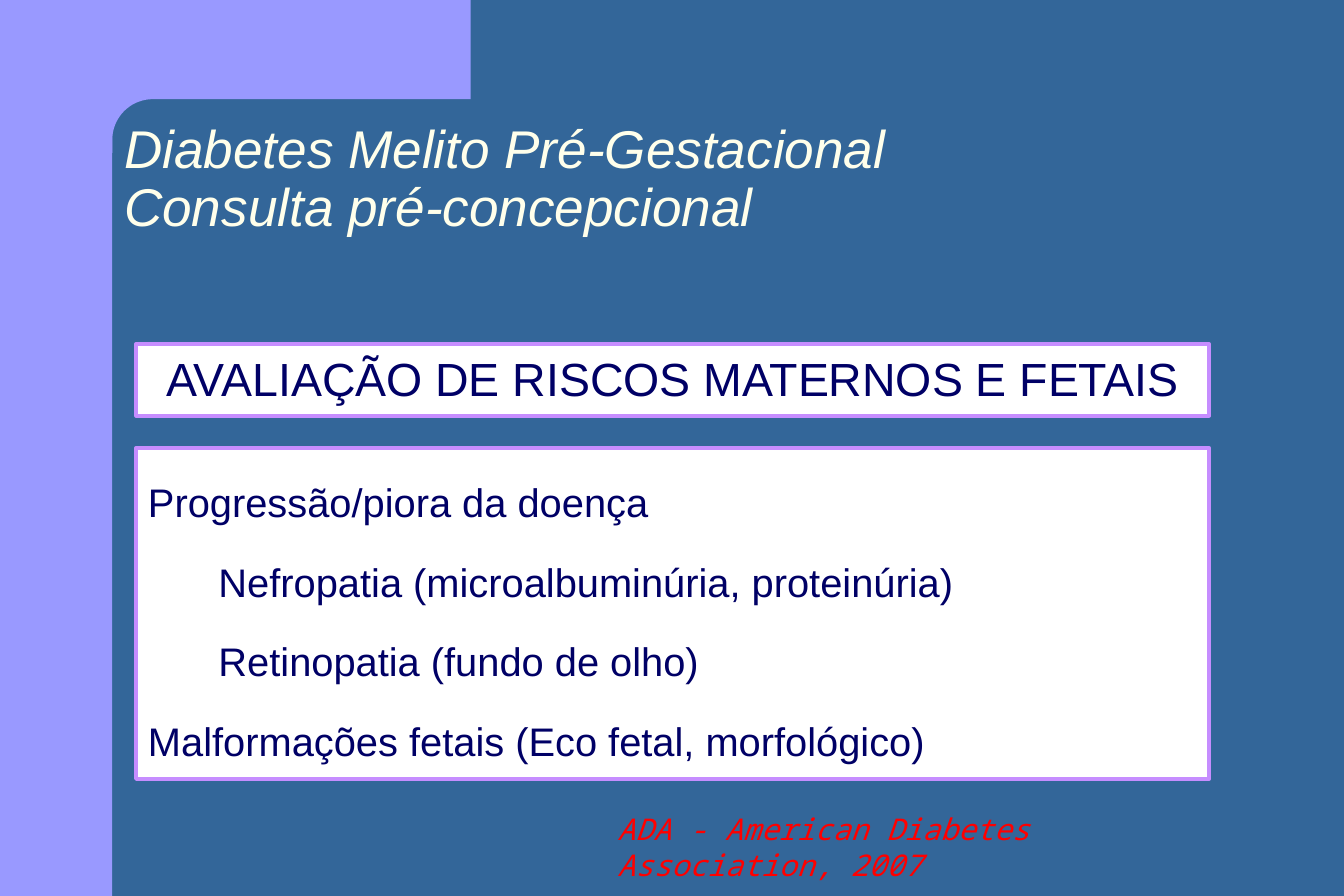
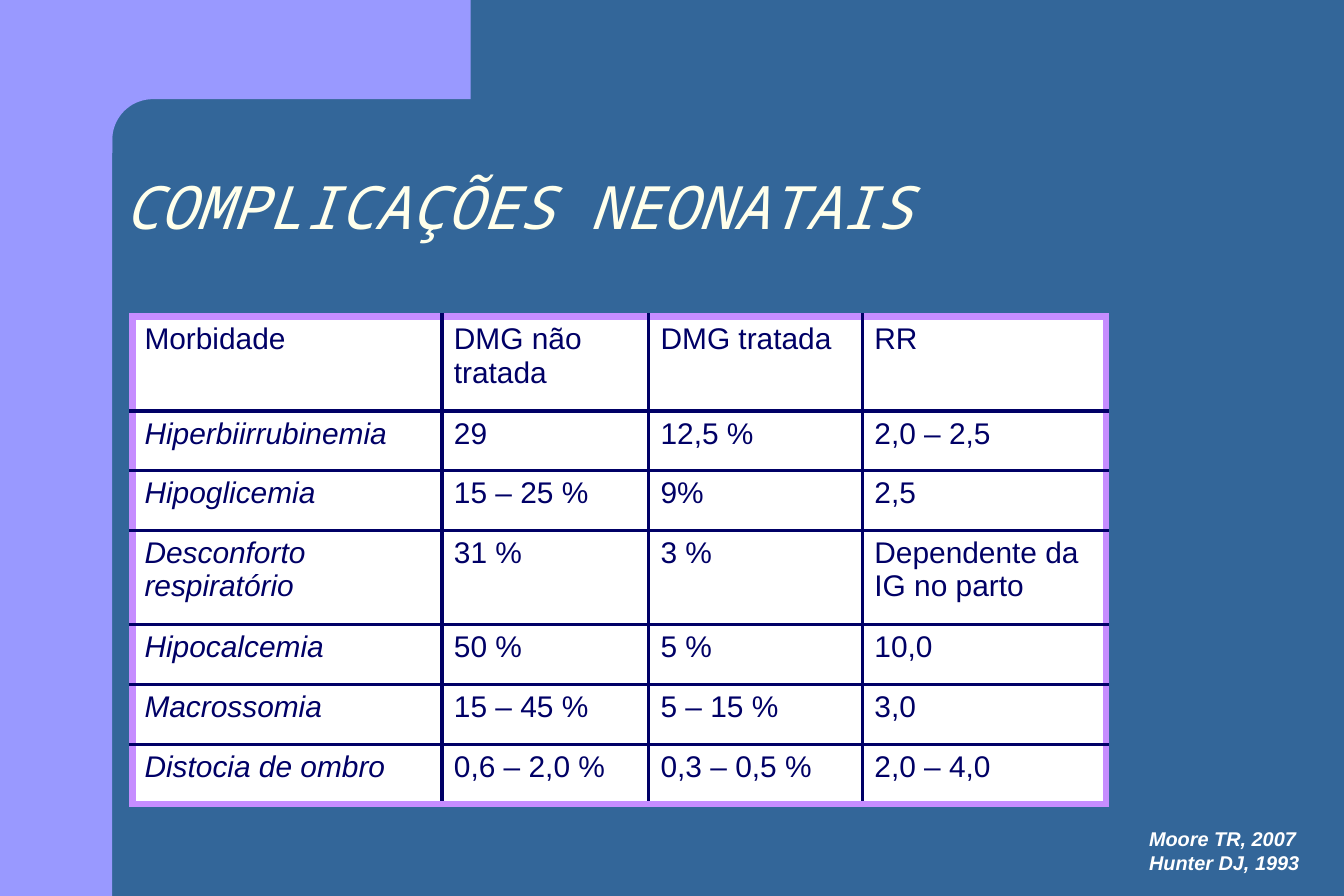
import math

from lxml import etree
from pptx import Presentation
from pptx.dml.color import RGBColor
from pptx.enum import shapes, text
from pptx.oxml.ns import qn
from pptx.util import Pt

EMU_PER_PX = 9144  # 100 px to the inch
SLIDE_W, SLIDE_H = 1125, 750

TEAL, LILAC, VIOLET = "336699", "9999FF", "C68DFF"
CREAM, NAVY, WHITE, RED = "FFFFEB", "000066", "FFFFFF", "FF0000"
SANS, MONO = "Arial", "Noto Sans Mono"

TITLE_FORMAT = {"italic": True, "color": CREAM}
PANEL_FORMAT = {"name": SANS, "color": NAVY}


def px(length):
    return round(length * EMU_PER_PX)


def rgb(hex_color):
    return RGBColor.from_string(hex_color)


def set_font(font, formats):
    for attribute, value in formats.items():
        if attribute == "color":
            font.color.rgb = rgb(value)
        else:
            setattr(font, attribute, value)


def paint(shape, fill, line=None, line_width=2.5):
    shape.shadow.inherit = False
    shape.fill.solid()
    shape.fill.fore_color.rgb = rgb(fill)
    if line:
        shape.line.color.rgb = rgb(line)
        shape.line.width = Pt(line_width)
    else:
        shape.line.fill.background()


def write(frame, lines, formats, anchor=text.MSO_ANCHOR.TOP, **paragraph_formats):
    """Fill a text frame with one paragraph per line and return the paragraphs."""
    frame.word_wrap = True
    frame.vertical_anchor = anchor
    for index, line in enumerate(lines):
        paragraph = frame.paragraphs[0] if index == 0 else frame.add_paragraph()
        run = paragraph.add_run()
        run.text = line
        set_font(run.font, formats)
        for attribute, value in paragraph_formats.items():
            setattr(paragraph, attribute, value)
    return frame.paragraphs


# Shared parts
def add_band(slide):
    """Left band and top tab, joined by a rounded inner corner."""
    band_w, tab_left, tab_right, tab_h, radius = 94, 56, 394, 83, 34
    band = slide.shapes.add_shape(
        shapes.MSO_SHAPE.RECTANGLE, 0, 0, px(band_w), px(SLIDE_H))
    paint(band, LILAC)

    center_x, center_y = band_w + radius, tab_h + radius
    corner = [(center_x - radius * math.cos(math.radians(angle)),
               center_y - radius * math.sin(math.radians(angle)))
              for angle in range(90, -1, -5)]
    outline = [(tab_right, 0), (tab_right, tab_h), *corner,
               (band_w, 128), (tab_left, 128), (tab_left, 0)]
    points = [(px(x), px(y)) for x, y in outline]
    builder = slide.shapes.build_freeform(*points[0], scale=1.0)
    builder.add_line_segments(points[1:], close=True)
    paint(builder.convert_to_shape(), LILAC)


def add_text(slide, box, lines, formats, **paragraph_formats):
    area = slide.shapes.add_textbox(*map(px, box))
    return write(area.text_frame, lines, formats, **paragraph_formats)


def add_title(slide, top, title, font_name, size):
    paragraphs = add_text(slide, (94, top, 975, 125), [""], {},
                          anchor=text.MSO_ANCHOR.BOTTOM, line_spacing=0.9)
    paragraphs[0].text = title
    for run in paragraphs[0].runs:
        set_font(run.font, {**TITLE_FORMAT, "name": font_name, "size": Pt(size)})


def add_panel(slide, box, lines, size, **paragraph_formats):
    panel = slide.shapes.add_shape(shapes.MSO_SHAPE.RECTANGLE, *map(px, box))
    paint(panel, WHITE, VIOLET)
    return write(panel.text_frame, lines, {**PANEL_FORMAT, "size": Pt(size)},
                 space_before=Pt(size * 0.2), **paragraph_formats)


# Table
def set_border(cell, side, color, width):
    border = etree.SubElement(cell._tc.get_or_add_tcPr(), qn("a:ln" + side),
                              w=str(Pt(width)))
    fill = etree.SubElement(border, qn("a:solidFill"))
    etree.SubElement(fill, qn("a:srgbClr"), val=color)


def add_grid(slide, left, top, widths, heights, rows):
    """Table with thin inner lines and a thick frame."""
    last_row, last_column = len(heights) - 1, len(widths) - 1
    table = slide.shapes.add_table(
        len(heights), len(widths), px(left), px(top),
        px(sum(widths)), px(sum(heights))).table
    table.first_row = table.horz_banding = False
    for column, width in zip(table.columns, widths):
        column.width = px(width)
    for row, height in zip(table.rows, heights):
        row.height = px(height)

    for r, values in enumerate(rows):
        for c, value in enumerate(values):
            cell = table.cell(r, c)
            is_name = r > 0 and c == 0
            write(cell.text_frame, [value],
                  {**PANEL_FORMAT, "size": Pt(18), "italic": is_name},
                  space_before=Pt(3.6))
            on_frame = {"L": c == 0, "R": c == last_column,
                        "T": r == 0, "B": r == last_row}
            for side, outer in on_frame.items():
                set_border(cell, side, *((VIOLET, 4.5) if outer else (NAVY, 2.25)))
            cell.fill.solid()
            cell.fill.fore_color.rgb = rgb(WHITE)


# Slides
def build_risks(slide):
    add_title(slide, 79, "Diabetes Melito Pré-Gestacional\vConsulta pré-concepcional",
              SANS, 32)
    add_text(slide, (507, 674, 558, 70), ["ADA - American Diabetes Association, 2007"],
             {"name": MONO, "size": Pt(18), "italic": True, "color": RED})
    risks = add_panel(
        slide, (114, 375, 898, 277),
        ["Progressão/piora da doença",
         "Nefropatia (microalbuminúria, proteinúria)",
         "Retinopatia (fundo de olho)",
         "Malformações fetais (Eco fetal, morfológico)"],
        24, alignment=text.PP_ALIGN.JUSTIFY, line_spacing=1.5)
    for disease in risks[1:3]:
        disease.level = 1
        disease._p.get_or_add_pPr().set("marL", str(px(59)))
    add_panel(slide, (114, 288, 898, 60), ["AVALIAÇÃO DE RISCOS MATERNOS E FETAIS"],
              28, alignment=text.PP_ALIGN.CENTER)


def build_complications(slide):
    add_title(slide, 83, "COMPLICAÇÕES NEONATAIS", MONO, 36)
    tall, short = 79, 50
    add_grid(
        slide, 111, 265, [259, 173, 179, 204],
        [tall, short, short, tall, short, short, short],
        [("Morbidade", "DMG não tratada", "DMG tratada", "RR"),
         ("Hiperbiirrubinemia", "29", "12,5 %", "2,0 – 2,5"),
         ("Hipoglicemia", "15 – 25 %", "9%", "2,5"),
         ("Desconforto respiratório", "31 %", "3 %", "Dependente da IG no parto"),
         ("Hipocalcemia", "50 %", "5 %", "10,0"),
         ("Macrossomia", "15 – 45 %", "5 – 15 %", "3,0"),
         ("Distocia de ombro", "0,6 – 2,0 %", "0,3 – 0,5 %", "2,0 – 4,0")])
    add_text(slide, (952, 687, 177, 50), ["Moore TR, 2007", "Hunter DJ, 1993"],
             {"name": SANS, "size": Pt(12), "bold": True, "italic": True,
              "color": WHITE})


def main():
    deck = Presentation()
    deck.slide_width, deck.slide_height = px(SLIDE_W), px(SLIDE_H)
    blank = deck.slide_layouts[6]
    for build in (build_risks, build_complications):
        slide = deck.slides.add_slide(blank)
        slide.background.fill.solid()
        slide.background.fill.fore_color.rgb = rgb(TEAL)
        add_band(slide)
        build(slide)
    deck.save("out.pptx")


if __name__ == "__main__":
    main()
